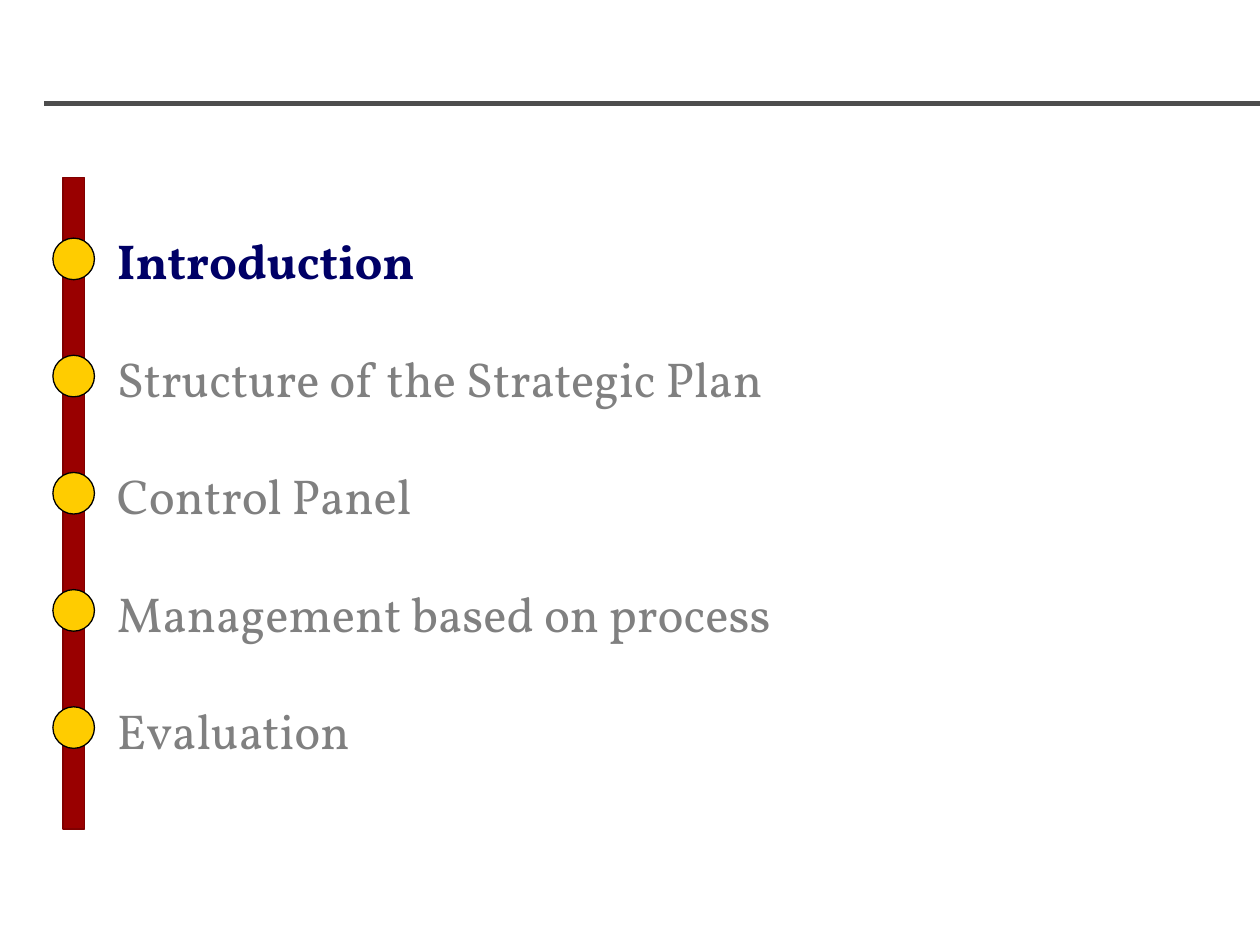
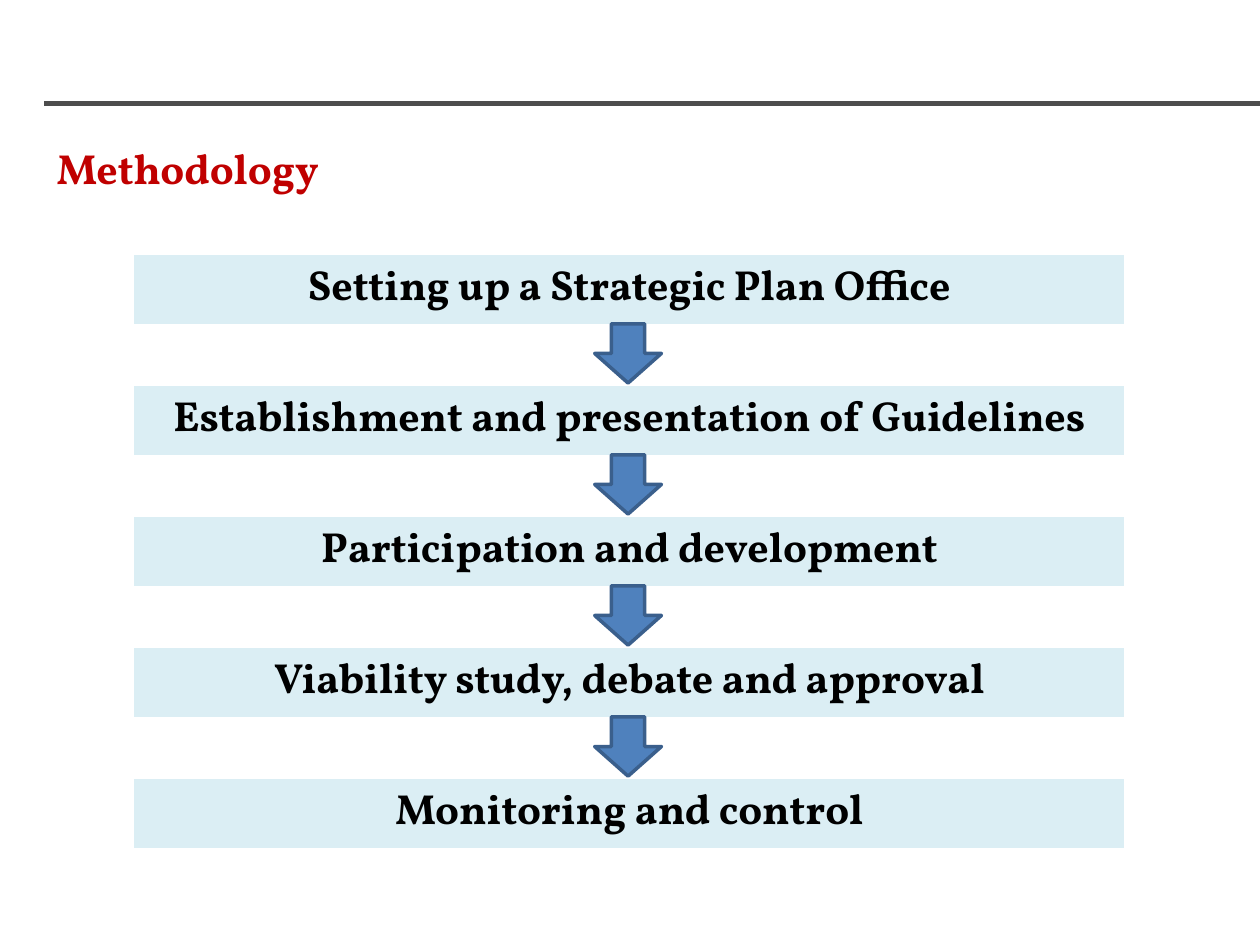
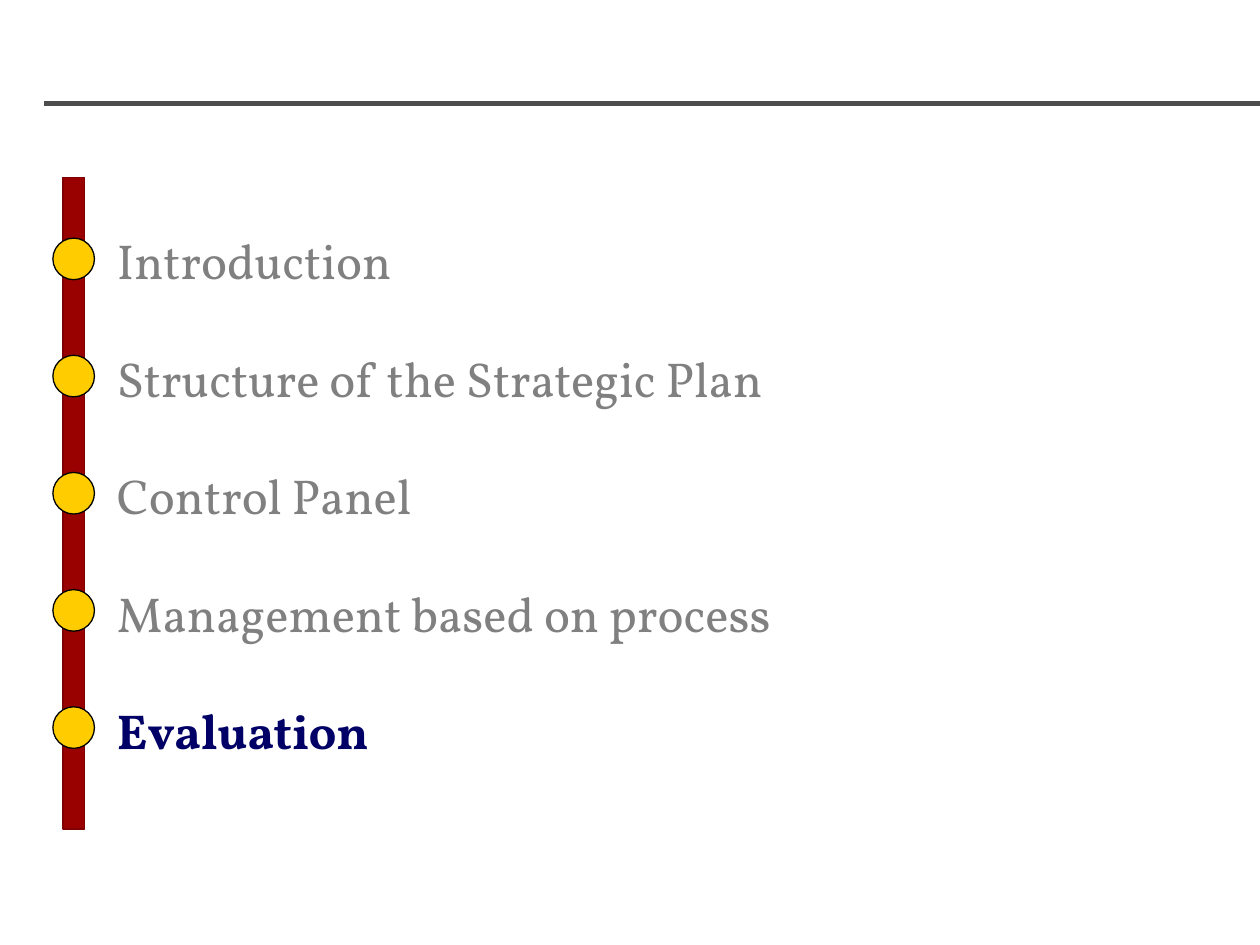
from lxml import etree
from pptx import Presentation
from pptx import util as u
from pptx.dml.color import RGBColor
from pptx.enum import shapes, text
from pptx.oxml.ns import qn

COLORS = {
    "rule": "4D4D4D", "rail": "990000", "rail_edge": "800000",
    "dot": "FFCC00", "black": "000000", "white": "FFFFFF",
    "active": "000066", "muted": "808080", "heading": "C00000",
    "step": "DBEEF4", "arrow": "4F81BD", "arrow_edge": "3A5F8C",
}
FONT = "Vollkorn"
TOPICS = ["Introduction", "Structure of the Strategic Plan", "Control Panel",
          "Management based on process", "Evaluation"]
STEPS = ["Setting up a Strategic Plan Office",
         "Establishment and presentation of Guidelines",
         "Participation and development",
         "Viability study, debate and approval",
         "Monitoring and control"]


def color(name):
    return RGBColor.from_string(COLORS[name])


class Deck:
    """Holds the shared style and the slide being built."""

    def __init__(self):
        self.prs = Presentation()
        self.prs.slide_width, self.prs.slide_height = u.Inches(10), u.Inches(7.5)
        self.slide = None

    def new_slide(self):
        self.slide = self.prs.slides.add_slide(self.prs.slide_layouts[6])
        self.rule(0.35, 10, 0.82)

    def rule(self, left, right, y):
        header_rule = self.slide.shapes.add_connector(
            shapes.MSO_CONNECTOR.STRAIGHT,
            u.Inches(left), u.Inches(y), u.Inches(right), u.Inches(y))
        header_rule.line.color.rgb = color("rule")
        header_rule.line.width = u.Pt(3)
        etree.SubElement(header_rule._element.spPr, qn("a:effectLst"))

    def shape(self, kind, box, fill, edge, weight=0.75):
        figure = self.slide.shapes.add_shape(kind, *map(u.Inches, box))
        figure.shadow.inherit = False
        figure.fill.solid()
        figure.fill.fore_color.rgb = color(fill)
        figure.line.color.rgb = color(edge)
        figure.line.width = u.Pt(weight)

    def style(self, paragraph, size, tone, bold):
        for run in paragraph.runs:
            run.font.name = FONT
            run.font.size = u.Pt(size)
            run.font.bold = bold
            run.font.color.rgb = color(tone)

    def text(self, box, lines, size, tone, active=None, gap=0):
        """Write lines as paragraphs; the active one is bold and dark blue."""
        frame = self.slide.shapes.add_textbox(*map(u.Inches, box)).text_frame
        frame.word_wrap = True
        frame.auto_size = text.MSO_AUTO_SIZE.SHAPE_TO_FIT_TEXT
        frame.text = "\n".join(lines)
        for i, paragraph in enumerate(frame.paragraphs):
            if i:
                paragraph.space_before = u.Pt(gap)
            is_active = lines[i] == active
            self.style(paragraph, size, "active" if is_active else tone,
                       is_active or tone == "heading")

    def step_table(self, box, label):
        table = self.slide.shapes.add_table(1, 1, *map(u.Inches, box)).table
        table.first_row = table.horz_banding = False
        cell = table.cell(0, 0)
        cell.text_frame.text = label
        paragraph = cell.text_frame.paragraphs[0]
        paragraph.alignment = text.PP_ALIGN.CENTER
        self.style(paragraph, 24, "black", True)
        # Borders come before the fill in the cell properties
        properties = cell._tc.get_or_add_tcPr()
        for side, weight in (("L", 1), ("R", 1), ("T", 1), ("B", 3)):
            border = etree.SubElement(properties, qn("a:ln" + side),
                                      w=str(u.Pt(weight)))
            paint = etree.SubElement(border, qn("a:solidFill"))
            etree.SubElement(paint, qn("a:srgbClr"), val=COLORS["white"])
        cell.fill.solid()
        cell.fill.fore_color.rgb = color("step")

    def agenda(self, active):
        self.new_slide()
        # Rail with one dot per topic
        self.shape(shapes.MSO_SHAPE.RECTANGLE, (0.5, 1.41, 0.17, 5.17),
                   "rail", "rail_edge")
        for i in range(len(TOPICS)):
            self.shape(shapes.MSO_SHAPE.OVAL,
                       (0.42, 1.89 + 0.93 * i, 0.33, 0.33), "dot", "black")
        # Topics
        self.text((0.83, 1.78, 8.68, 4.34), TOPICS, 28, "muted", active, gap=33.6)

    def methodology(self):
        self.new_slide()
        self.text((0.35, 1.08, 9.18, 0.51), ["Methodology"], 24, "heading")
        # Steps joined by arrows
        for i, step in enumerate(STEPS):
            top = 2.02 + 1.04 * i
            self.step_table((1.06, top, 7.87, 0.57), step)
            if i < len(STEPS) - 1:
                self.shape(shapes.MSO_SHAPE.DOWN_ARROW,
                           (4.72, top + 0.55, 0.53, 0.47),
                           "arrow", "arrow_edge", 2)


def main():
    deck = Deck()
    deck.agenda("Introduction")
    deck.methodology()
    deck.agenda("Evaluation")
    deck.prs.save("out.pptx")


if __name__ == "__main__":
    main()
